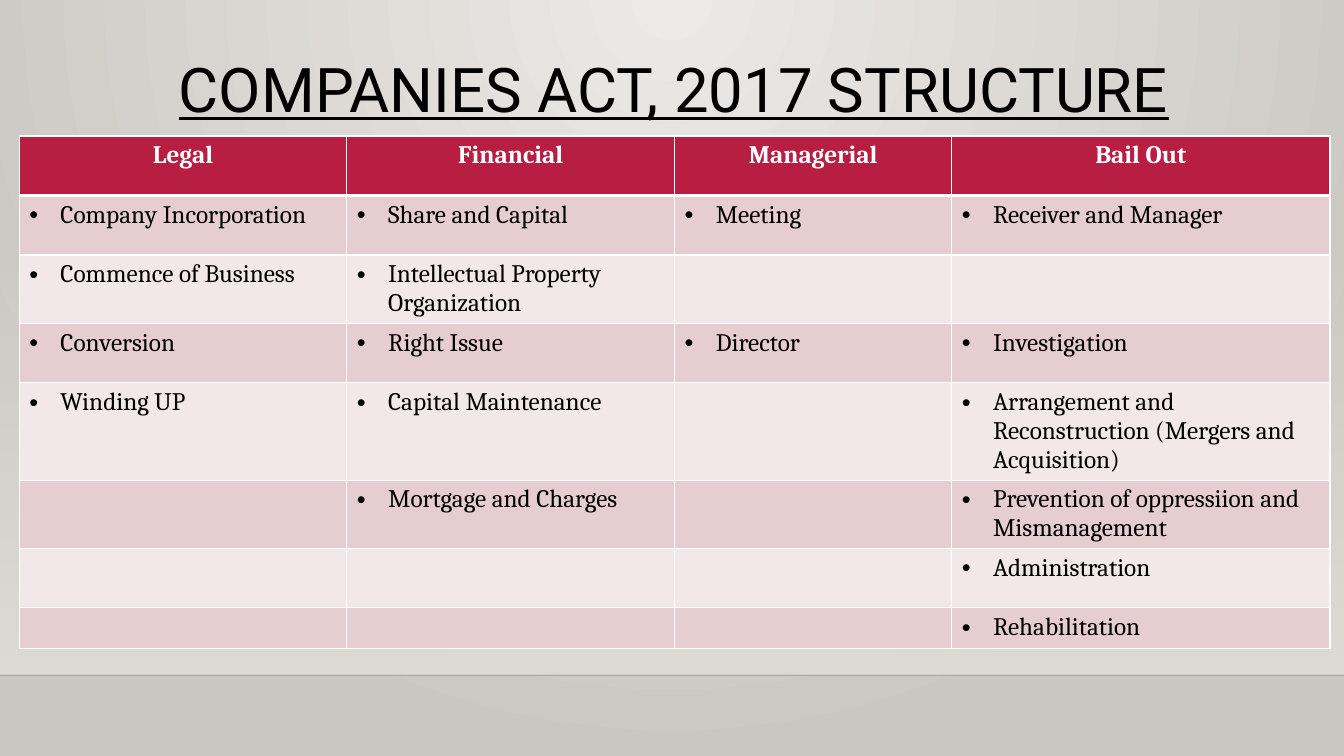
import pptx
import pptx.util
import pptx.dml.color
import pptx.enum.shapes
import pptx.enum.text
import pptx.oxml
import pptx.oxml.ns
import lxml.etree

Inches = pptx.util.Inches
Pt = pptx.util.Pt
RGBColor = pptx.dml.color.RGBColor
Align = pptx.enum.text.PP_ALIGN
qn = pptx.oxml.ns.qn

WHITE = RGBColor(0xFF, 0xFF, 0xFF)
BLACK = RGBColor(0, 0, 0)
RED = RGBColor(0xB7, 0x1E, 0x42)
PINK = RGBColor(0xE6, 0xCD, 0xCF)
PALE = RGBColor(0xF3, 0xE8, 0xE9)
LIGHT = RGBColor(0xEC, 0xEA, 0xE7)
GREY = RGBColor(0xCA, 0xC7, 0xC1)
SAND = RGBColor(0xDF, 0xDB, 0xD5)

WIDTH, HEIGHT = 13.33, 7.5
FLOOR = 6.7

COLS = [3.25, 3.25, 2.75, 3.75]
ROWS = [
    (0.59, ["Legal", "Financial", "Managerial", "Bail Out"]),
    (0.59, ["Company Incorporation", "Share and Capital", "Meeting",
            "Receiver and Manager"]),
    (0.66, ["Commence of Business", "Intellectual Property Organization",
            "", ""]),
    (0.59, ["Conversion", "Right Issue", "Director", "Investigation"]),
    (0.95, ["Winding UP", "Capital Maintenance", "",
            "Arrangement and Reconstruction (Mergers and Acquisition)"]),
    (0.66, ["", "Mortgage and Charges", "",
            "Prevention of oppressiion and Mismanagement"]),
    (0.59, ["", "", "", "Administration"]),
    (0.33, ["", "", "", "Rehabilitation"]),
]


def add_sub(parent, tag, **attrs):
    return lxml.etree.SubElement(parent, qn(tag), attrs)


def set_stops(fill, *colors):
    fill.gradient()
    for stop, color, place in zip(fill.gradient_stops, colors, (0, 1)):
        stop.color.rgb = color
        stop.position = place


def set_alpha(root, percent):
    """Set the opacity of the first colour under root."""
    color = next(root.iter(qn("a:srgbClr")))
    add_sub(color, "a:alpha", val=str(percent * 1000))


def paint_back(slide):
    set_stops(slide.background.fill, LIGHT, GREY)
    grad = next(slide.element.iter(qn("a:gradFill")))
    glow = pptx.oxml.parse_xml(
        f'<a:path {pptx.oxml.ns.nsdecls("a")} path="circle">'
        '<a:fillToRect l="43000" t="0" r="43000" b="100000"/></a:path>')
    grad.replace(grad.find(qn("a:lin")), glow)


def add_wall(slide, left, top, width, height):
    """Draw the fading wall and the floor line along its lower edge."""
    wall = slide.shapes.add_shape(
        pptx.enum.shapes.MSO_SHAPE.RECTANGLE,
        Inches(left), Inches(top), Inches(width), Inches(height))
    wall.shadow.inherit = False
    wall.line.fill.background()
    set_stops(wall.fill, SAND, SAND)
    wall.fill.gradient_angle = 270
    set_alpha(wall.element, 0)

    edge = Inches(top + height)
    line = slide.shapes.add_connector(
        pptx.enum.shapes.MSO_CONNECTOR.STRAIGHT,
        Inches(left), edge, Inches(left + width), edge)
    line.line.width = Pt(1)
    line.line.color.rgb = BLACK
    set_alpha(line.element, 20)
    add_sub(line.element.spPr, "a:effectLst")


def set_title(slide, left, top, width, height):
    title = slide.shapes.title
    title.left, title.top = Inches(left), Inches(top)
    title.width, title.height = Inches(width), Inches(height)
    frame = title.text_frame
    frame.text = "COMPANIES ACT, 2017 STRUCTURE"
    frame.word_wrap = True
    frame.auto_size = pptx.enum.text.MSO_AUTO_SIZE.NONE
    frame.vertical_anchor = pptx.enum.text.MSO_ANCHOR.BOTTOM
    frame.margin_bottom = 0
    para = frame.paragraphs[0]
    para.alignment = Align.CENTER
    para.line_spacing = 0.9
    font = para.runs[0].font
    font.name, font.size = "Roboto", Pt(44)
    font.underline = True
    font.color.rgb = BLACK


def set_edges(cell, head):
    props = cell._tc.get_or_add_tcPr()
    for side in "LRTB":
        width = 3 if head and side == "B" else 1
        edge = add_sub(props, f"a:ln{side}", w=str(Pt(width)))
        fill = add_sub(edge, "a:solidFill")
        add_sub(fill, "a:srgbClr", val=str(WHITE))


def set_cell(cell, text, row):
    head = row == 0
    set_edges(cell, head)
    cell.fill.solid()
    cell.fill.fore_color.rgb = RED if head else PINK if row % 2 else PALE
    if not text:
        return
    cell.text_frame.text = text
    para = cell.text_frame.paragraphs[0]
    if head:
        para.alignment = Align.CENTER
    else:
        props = para._p.get_or_add_pPr()
        indent = Inches(0.31)
        props.set("marL", str(indent))
        props.set("indent", str(-indent))
        add_sub(props, "a:buFont", typeface="Arial")
        add_sub(props, "a:buChar", char="•")
    font = para.runs[0].font
    font.name, font.size = "Cambria", Pt(18)
    font.bold = head
    font.color.rgb = WHITE if head else BLACK


def add_topics(slide, left, top, width, height):
    table = slide.shapes.add_table(
        len(ROWS), len(COLS), Inches(left), Inches(top),
        Inches(width), Inches(height)).table
    for col, size in zip(table.columns, COLS):
        col.width = Inches(size)
    for row, (size, texts) in enumerate(ROWS):
        table.rows[row].height = Inches(size)
        for col, text in enumerate(texts):
            set_cell(table.cell(row, col), text, row)


def main():
    deck = pptx.Presentation()
    deck.slide_width, deck.slide_height = Inches(WIDTH), Inches(HEIGHT)
    slide = deck.slides.add_slide(deck.slide_layouts.get_by_name("Title Only"))
    paint_back(slide)
    add_wall(slide, 0, 2.21, WIDTH, FLOOR - 2.21)
    set_title(slide, 1.34, 0.27, 10.69, 0.98)
    add_topics(slide, 0.19, 1.35, sum(COLS), sum(size for size, _ in ROWS))
    deck.save("out.pptx")


if __name__ == "__main__":
    main()
